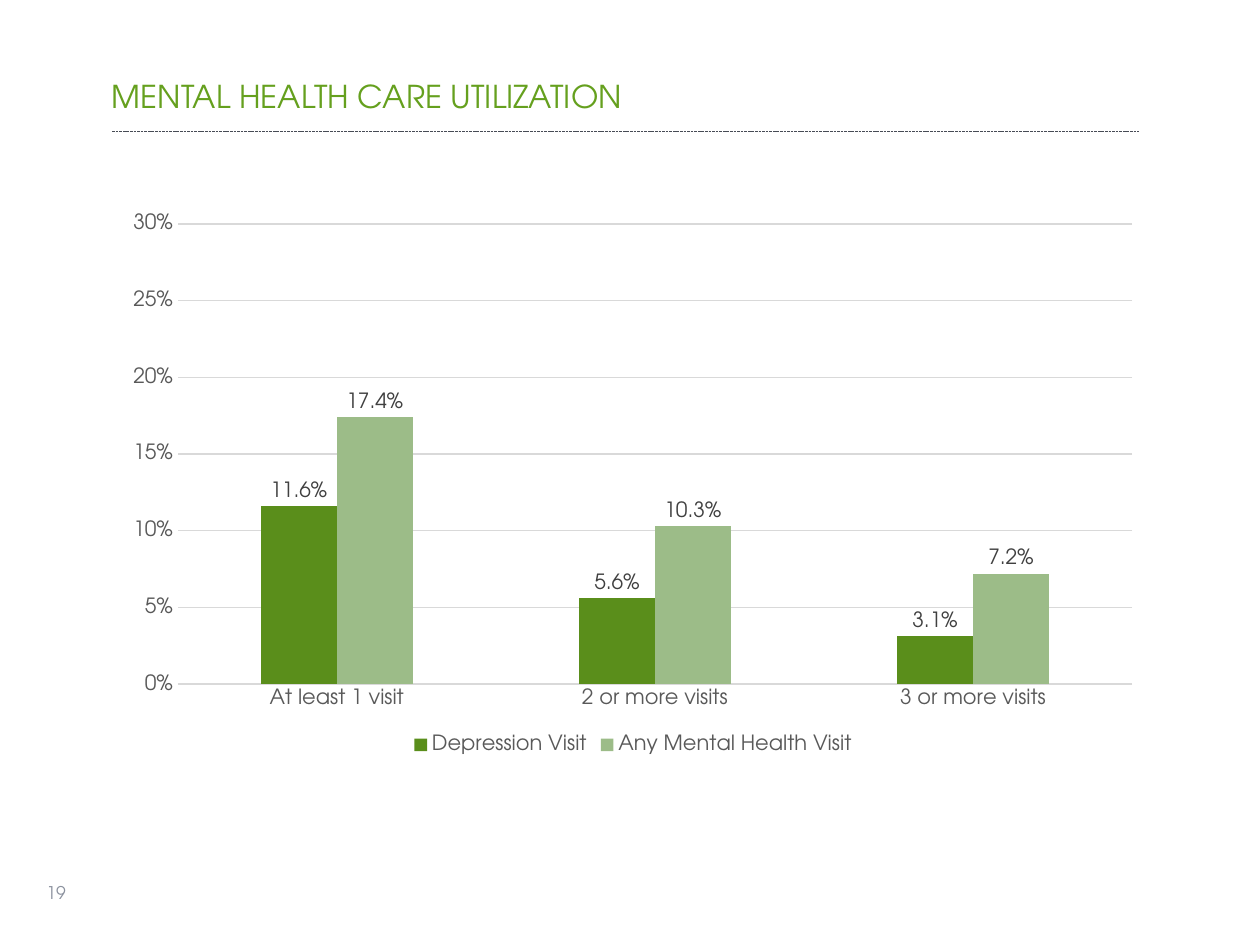
from typing import NamedTuple

from lxml.etree import SubElement
from pptx import Presentation
from pptx.chart.data import CategoryChartData
from pptx.dml.color import RGBColor
from pptx.enum.chart import XL_CHART_TYPE as ChartType
from pptx.enum.chart import XL_LABEL_POSITION as LabelPosition
from pptx.enum.chart import XL_LEGEND_POSITION as LegendPosition
from pptx.enum.chart import XL_TICK_MARK as TickMark
from pptx.enum.dml import MSO_LINE_DASH_STYLE as DashStyle
from pptx.enum.text import MSO_ANCHOR as Anchor
from pptx.oxml.ns import qn
from pptx.util import Inches, Pt

FONT = "TeX Gyre Adventor"
WIDTH, HEIGHT = Inches(10), Inches(7.5)


class Box(NamedTuple):
    """A frame in shares of the slide's width and height."""
    left: float
    top: float
    width: float
    height: float

    def lengths(self) -> tuple:
        return (int(self.left * WIDTH), int(self.top * HEIGHT),
                int(self.width * WIDTH), int(self.height * HEIGHT))


class Label(NamedTuple):
    text: str
    box: Box
    size: int
    color: str


class Series(NamedTuple):
    name: str
    values: tuple
    color: str


LABELS = [
    Label("MENTAL HEALTH CARE UTILIZATION", Box(0.079, 0.075, 0.825, 0.073), 18, "65A01E"),
    Label("19", Box(0.027, 0.927, 0.233, 0.053), 10, "8B919E"),
]
CATEGORIES = ["At least 1 visit", "2 or more visits", "3 or more visits"]
SERIES = [
    Series("Depression Visit", (0.116, 0.056, 0.031), "5A8E1B"),
    Series("Any Mental Health Visit", (0.174, 0.103, 0.072), "9CBC88"),
]
CHART_BOX = Box(0.09, 0.216, 0.825, 0.588)
# Inner plot area in shares of the chart
PLOT_LAYOUT = {"x": 0.062, "y": 0.036, "w": 0.918, "h": 0.828}


def rgb(color: str) -> RGBColor:
    return RGBColor.from_string(color)


def style_font(font, size: int, color: str) -> None:
    font.name = FONT
    font.size = Pt(size)
    font.bold = False
    font.color.rgb = rgb(color)


def style_line(line, color: str, width: float) -> None:
    line.color.rgb = rgb(color)
    line.width = Pt(width)


def add_label(slide, label: Label) -> None:
    text_frame = slide.shapes.add_textbox(*label.box.lengths()).text_frame
    text_frame.word_wrap = True
    text_frame.vertical_anchor = Anchor.TOP
    text_frame.text = label.text
    style_font(text_frame.paragraphs[0].runs[0].font, label.size, label.color)


def add_rule(slide, left: float, right: float, top: float) -> None:
    y = int(top * HEIGHT)
    rule = slide.shapes.add_connector(1, int(left * WIDTH), y, int(right * WIDTH), y)
    style_line(rule.line, "474B55", 0.5)
    rule.line.dash_style = DashStyle.SQUARE_DOT
    SubElement(rule._element.spPr, qn("a:effectLst"))


def fix_plot_area(chart) -> None:
    plot_area = chart._chartSpace.chart.plotArea
    layout = plot_area.find(qn("c:layout"))
    if layout is None:
        layout = SubElement(plot_area, qn("c:layout"))
        plot_area.insert(0, layout)
    manual = SubElement(layout, qn("c:manualLayout"))
    settings = {"layoutTarget": "inner", "xMode": "edge", "yMode": "edge", **PLOT_LAYOUT}
    for name, value in settings.items():
        SubElement(manual, qn(f"c:{name}")).set("val", str(value))


def style_axes(chart) -> None:
    category_axis, value_axis = chart.category_axis, chart.value_axis
    for axis in (category_axis, value_axis):
        axis.major_tick_mark = axis.minor_tick_mark = TickMark.NONE
        style_font(axis.tick_labels.font, 12, "595959")
    style_line(category_axis.format.line, "D9D9D9", 0.75)
    value_axis.format.line.fill.background()
    value_axis.minimum_scale, value_axis.maximum_scale = 0, 0.3
    value_axis.major_unit = 0.05
    value_axis.tick_labels.number_format = "0%"
    value_axis.tick_labels.number_format_is_linked = False
    style_line(value_axis.major_gridlines.format.line, "D9D9D9", 0.75)


def add_column_chart(slide) -> None:
    data = CategoryChartData(number_format="0.0%")
    data.categories = CATEGORIES
    for series in SERIES:
        data.add_series(series.name, series.values)
    chart = slide.shapes.add_chart(
        ChartType.COLUMN_CLUSTERED, *CHART_BOX.lengths(), data).chart
    style_font(chart.font, 10, "000000")
    chart.has_title = False
    fix_plot_area(chart)
    style_axes(chart)

    # Legend
    chart.has_legend = True
    chart.legend.position = LegendPosition.BOTTOM
    chart.legend.include_in_layout = False
    style_font(chart.legend.font, 12, "595959")

    # Columns and their value labels
    plot = chart.plots[0]
    plot.gap_width, plot.overlap = 219, 0
    plot.vary_by_categories = False
    for column, series in zip(plot.series, SERIES):
        column.format.fill.solid()
        column.format.fill.fore_color.rgb = rgb(series.color)
        labels = column.data_labels
        labels.show_value = True
        labels.number_format = "0.0%"
        labels.number_format_is_linked = False
        labels.position = LabelPosition.OUTSIDE_END
        style_font(labels.font, 12, "404040")


def main() -> None:
    presentation = Presentation()
    presentation.slide_width, presentation.slide_height = WIDTH, HEIGHT
    slide = presentation.slides.add_slide(presentation.slide_layouts[6])
    add_rule(slide, 0.089, 0.904, 0.139)
    for label in LABELS:
        add_label(slide, label)
    add_column_chart(slide)
    presentation.save("out.pptx")


if __name__ == "__main__":
    main()
